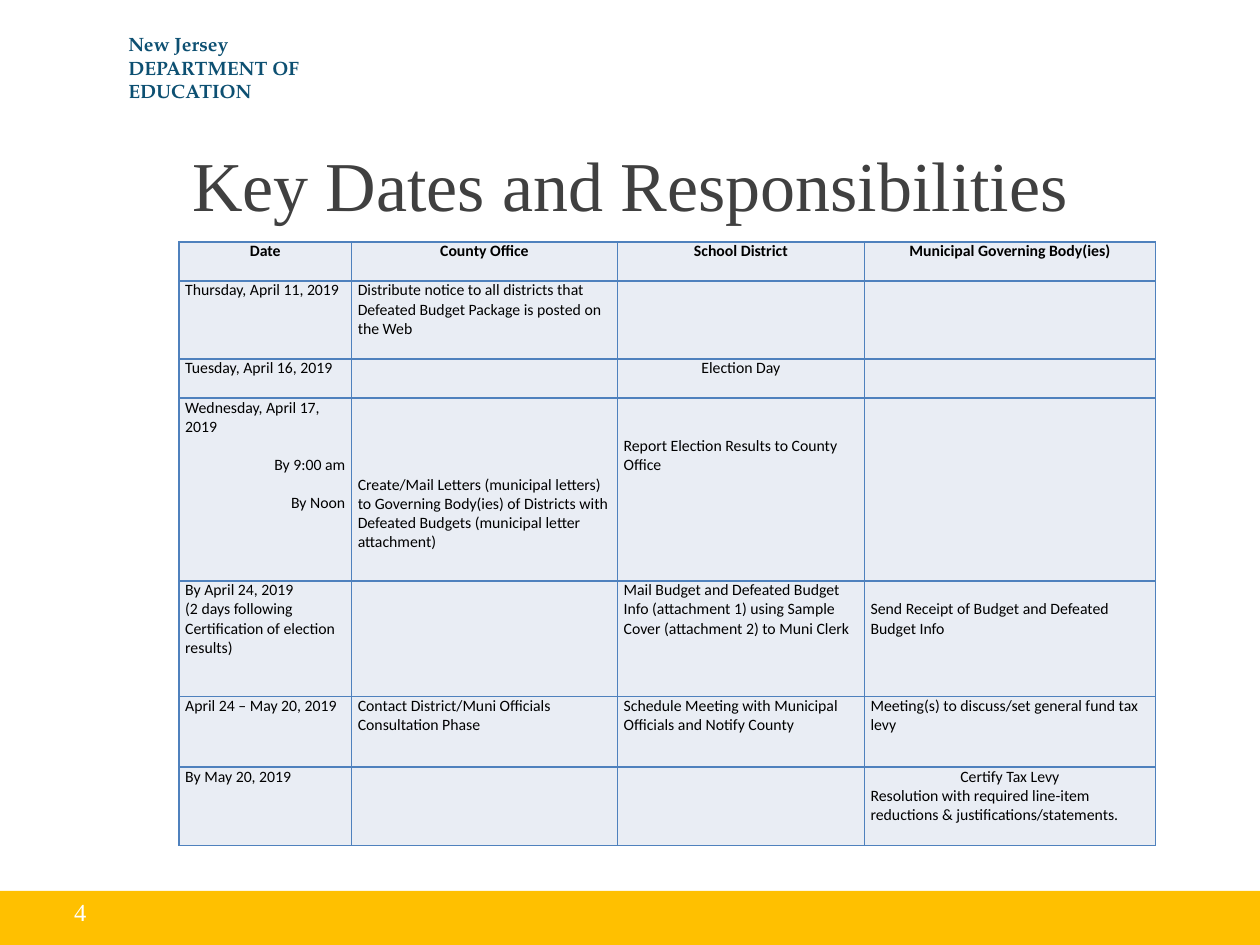
from dataclasses import dataclass

from lxml.etree import SubElement
from pptx import Presentation
from pptx.dml.color import RGBColor
from pptx.enum.shapes import MSO_SHAPE
from pptx.enum.text import MSO_ANCHOR, PP_ALIGN
from pptx.oxml.ns import qn
from pptx.util import Inches, Pt

GOLD = RGBColor(0xFF, 0xC0, 0x00)
TEAL = RGBColor(0x0D, 0x50, 0x72)
WHITE = RGBColor(0xFF, 0xFF, 0xFF)
BLACK = RGBColor(0x00, 0x00, 0x00)
CHARCOAL = RGBColor(0x40, 0x40, 0x40)
PALE_BLUE = RGBColor(0xE9, 0xED, 0xF4)
BORDER_BLUE = RGBColor(0x4F, 0x81, 0xBD)

TABLE_LINE = Pt(11)
COLUMN_WIDTHS = [1.37, 2.11, 1.96, 2.31]
ROW_HEIGHTS = [0.31, 0.62, 0.31, 1.45, 0.92, 0.56, 0.62]


@dataclass
class Entry:
    """One paragraph of a schedule cell, with the lines left free above it."""
    text: str
    align: PP_ALIGN = PP_ALIGN.LEFT
    lines_above: int = 0


HEADINGS = ["Date", "County Office", "School District", "Municipal Governing Body(ies)"]
SCHEDULE = [
    [[Entry(heading, PP_ALIGN.CENTER)] for heading in HEADINGS],
    [[Entry("Thursday, April 11, 2019")],
     [Entry("Distribute notice to all districts that Defeated Budget Package "
            "is posted on the Web")],
     [], []],
    [[Entry("Tuesday, April 16, 2019")], [],
     [Entry("Election Day", PP_ALIGN.CENTER)], []],
    [[Entry("Wednesday, April 17, 2019"),
      Entry("By 9:00 am", PP_ALIGN.RIGHT, 1),
      Entry("By Noon", PP_ALIGN.RIGHT, 1)],
     [Entry("Create/Mail Letters (municipal letters) to Governing Body(ies) of "
            "Districts with Defeated Budgets (municipal letter attachment)", lines_above=4)],
     [Entry("Report Election Results to County Office", lines_above=2)], []],
    [[Entry("By April 24, 2019"),
      Entry("(2 days following Certification of election results)")],
     [],
     [Entry("Mail Budget and Defeated Budget Info (attachment 1) using Sample Cover "
            "(attachment 2) to Muni Clerk")],
     [Entry("Send Receipt of Budget and Defeated Budget Info", lines_above=1)]],
    [[Entry("April 24 – May 20, 2019")],
     [Entry("Contact District/Muni Officials"), Entry("Consultation Phase")],
     [Entry("Schedule Meeting with Municipal Officials and Notify County")],
     [Entry("Meeting(s) to discuss/set general fund tax levy")]],
    [[Entry("By May 20, 2019")], [], [],
     [Entry("Certify Tax Levy", PP_ALIGN.CENTER),
      Entry("Resolution with required line-item reductions & justifications/statements.")]],
]


def set_font(paragraph, name, size, color, bold=False):
    """Set the font of a whole paragraph."""
    font = paragraph.font
    font.name, font.size, font.bold = name, Pt(size), bold
    font.color.rgb = color


def add_footer_band(slide):
    """Add the gold band along the bottom edge."""
    band = slide.shapes.add_shape(
        MSO_SHAPE.RECTANGLE, 0, Inches(7.07), Inches(10), Inches(0.43))
    band.shadow.inherit = False
    band.fill.solid()
    band.fill.fore_color.rgb = GOLD
    band.line.fill.background()


def add_label(slide, box, lines, name, size, color, bold=False, wrap=True,
              anchor=MSO_ANCHOR.TOP):
    """Add a text box with one paragraph per line."""
    frame = slide.shapes.add_textbox(*map(Inches, box)).text_frame
    frame.word_wrap = wrap
    frame.vertical_anchor = anchor
    frame.text = "\n".join(lines)
    for paragraph in frame.paragraphs:
        set_font(paragraph, name, size, color, bold)


def set_title(slide, text):
    """Place and format the slide title."""
    title = slide.shapes.title
    title.left, title.top = Inches(0.5), Inches(1)
    title.width, title.height = Inches(9), Inches(0.92)
    title.text_frame.text = text
    heading = title.text_frame.paragraphs[0]
    heading.alignment = PP_ALIGN.CENTER
    set_font(heading, "Times New Roman", 40, CHARCOAL)


def add_borders(cell):
    """Draw a thin blue line on every side of a cell."""
    properties = cell._tc.get_or_add_tcPr()
    for side in ("a:lnL", "a:lnR", "a:lnT", "a:lnB"):
        line = SubElement(properties, qn(side), w=str(Pt(1)))
        fill = SubElement(line, qn("a:solidFill"))
        SubElement(fill, qn("a:srgbClr"), val=str(BORDER_BLUE))


def fill_cell(cell, entries, bold):
    """Format one schedule cell and write its entries."""
    add_borders(cell)
    cell.fill.solid()
    cell.fill.fore_color.rgb = PALE_BLUE
    cell.margin_left = cell.margin_right = Inches(0.05)
    cell.margin_top = TABLE_LINE * entries[0].lines_above if entries else 0
    cell.margin_bottom = 0
    cell.text = "\n".join(entry.text for entry in entries)
    for paragraph in cell.text_frame.paragraphs:
        set_font(paragraph, "Calibri", 9, BLACK, bold)
    for index, (paragraph, entry) in enumerate(zip(cell.text_frame.paragraphs, entries)):
        paragraph.alignment = entry.align
        if index and entry.lines_above:
            paragraph.space_before = TABLE_LINE * entry.lines_above


def add_schedule(slide):
    """Add the table of dates and responsibilities."""
    table = slide.shapes.add_table(
        len(ROW_HEIGHTS), len(COLUMN_WIDTHS), Inches(1.42), Inches(1.92),
        Inches(sum(COLUMN_WIDTHS)), Inches(sum(ROW_HEIGHTS))).table
    for column, width in zip(table.columns, COLUMN_WIDTHS):
        column.width = Inches(width)
    for index, (row, height, cells) in enumerate(zip(table.rows, ROW_HEIGHTS, SCHEDULE)):
        row.height = Inches(height)
        for cell, entries in zip(row.cells, cells):
            fill_cell(cell, entries, bold=index == 0)


def main():
    """Build and save the slide."""
    deck = Presentation()
    deck.slide_width, deck.slide_height = Inches(10), Inches(7.5)
    slide = deck.slides.add_slide(deck.slide_layouts[5])
    add_footer_band(slide)
    add_label(slide, (0.92, 0.3, 2.5, 0.47), ["New Jersey", "DEPARTMENT OF EDUCATION"],
              "TeX Gyre Pagella", 11, TEAL, bold=True, anchor=MSO_ANCHOR.MIDDLE)
    add_label(slide, (0.49, 7.07, 0.43, 0.34), ["4"], "Times New Roman", 14, WHITE,
              wrap=False)
    set_title(slide, "Key Dates and Responsibilities")
    add_schedule(slide)
    deck.save("out.pptx")


if __name__ == "__main__":
    main()
